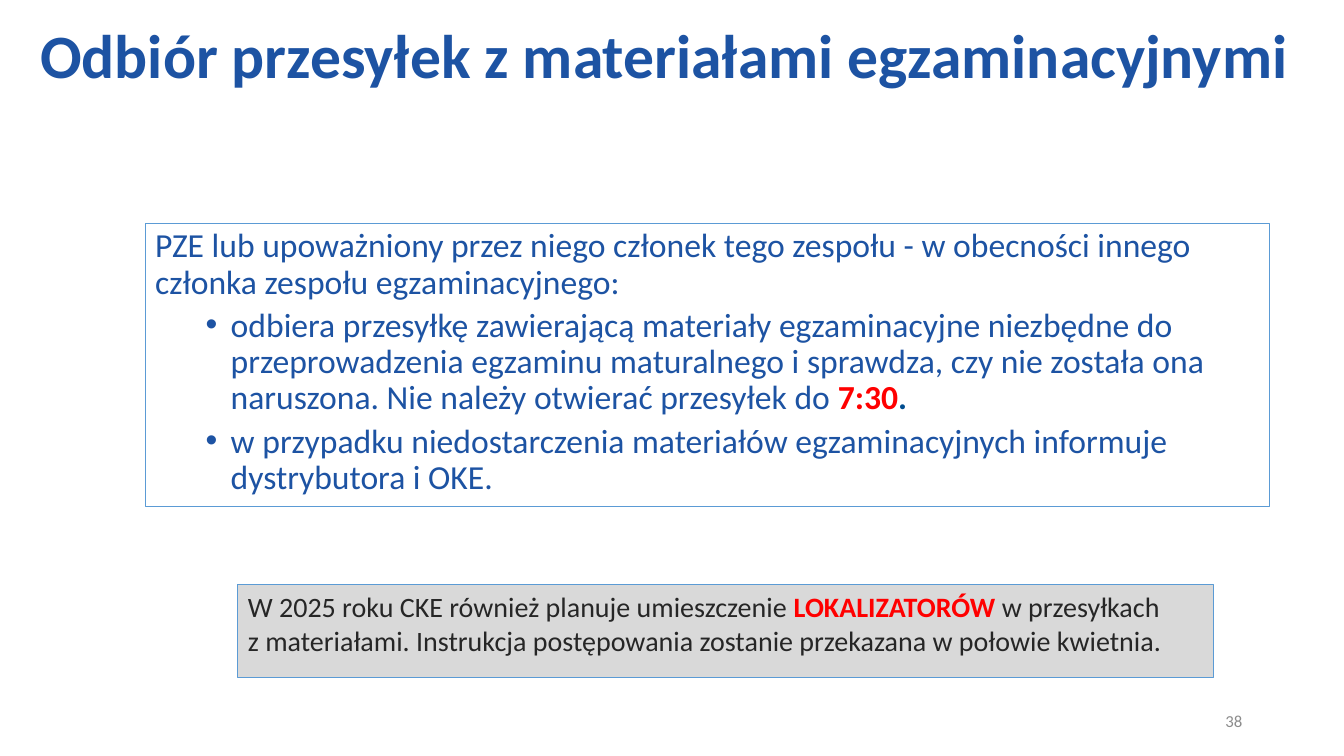
from lxml.etree import SubElement
from pptx import Presentation
from pptx.dml.color import RGBColor
from pptx.enum.shapes import MSO_SHAPE
from pptx.enum.text import MSO_ANCHOR as ANCHOR, PP_ALIGN as ALIGN
from pptx.oxml.ns import qn
from pptx.util import Inches, Pt

W, H = 13.33, 7.5
FONT = "Calibri"
BLUE, NAVY, RED = "1D53A3", "004D8F", "FF0000"
DARK, GREY, PALE, BORDER = "262626", "8C8C8C", "D9D9D9", "5B9BD5"

# A paragraph is a list of runs: (text, format changes)
HOT = {"color": RED, "bold": True}
TITLE = [[("Odbiór przesyłek z materiałami egzaminacyjnymi ", {"bold": True})]]
DUTIES = [
    [("PZE lub upoważniony przez niego członek tego zespołu - w obecności innego "
      "członka zespołu egzaminacyjnego:", {})],
    [("odbiera przesyłkę zawierającą materiały egzaminacyjne niezbędne do "
      "przeprowadzenia egzaminu maturalnego i sprawdza, czy nie została ona "
      "naruszona. Nie należy otwierać przesyłek do ", {}),
     ("7:30", HOT), (".", {"color": NAVY, "bold": True})],
    [("w przypadku niedostarczenia materiałów egzaminacyjnych informuje "
      "dystrybutora i OKE.", {})],
]
NOTICE = [[
    ("W 2025 roku CKE również planuje umieszczenie ", {}),
    ("LOKALIZATORÓW ", HOT),
    ("w przesyłkach\nz materiałami. Instrukcja postępowania zostanie przekazana "
     "w połowie kwietnia.", {}),
]]
NUMBER = [[("38", {})]]

# Each box: left, top, width, height in inches, then its look
BOXES = [
    dict(at=(0, 0, W, 1.16), text=TITLE, size=44, color=BLUE,
         align=ALIGN.CENTER, anchor=ANCHOR.MIDDLE, spacing=0.9),
    dict(at=(1.44, 2.22, 11.15, 2.81), text=DUTIES, size=24, color=BLUE,
         line=BORDER, spacing=0.9, bullets_from=1),
    dict(at=(9.42, 6.95, 3, 0.4), text=NUMBER, size=12, color=GREY,
         align=ALIGN.RIGHT, anchor=ANCHOR.MIDDLE),
    dict(at=(2.36, 5.8, 9.68, 0.92), text=NOTICE, size=20, color=DARK,
         line=BORDER, fill=PALE),
]


def rgb(code):
    return RGBColor.from_string(code)


def add_bullet(p):
    pPr = p._p.get_or_add_pPr()
    pPr.set("marL", str(Inches(0.75)))
    pPr.set("indent", str(Inches(-0.25)))
    SubElement(pPr, qn("a:buFont")).set("typeface", "Arial")
    SubElement(pPr, qn("a:buChar")).set("char", "•")


def add_runs(p, runs, size, color):
    for text, changes in runs:
        for i, part in enumerate(text.split("\n")):
            if i:
                p.add_line_break()
            r = p.add_run()
            r.text = part
            look = {"name": FONT, "size": Pt(size), "bold": False,
                    "color": color, **changes}
            r.font.color.rgb = rgb(look.pop("color"))
            for name, value in look.items():
                setattr(r.font, name, value)


def add_box(slide, at, text, size, color, align=ALIGN.LEFT, anchor=ANCHOR.TOP,
            spacing=1.0, line=None, fill=None, bullets_from=None):
    place = [Inches(v) for v in at]
    if line:
        s = slide.shapes.add_shape(MSO_SHAPE.RECTANGLE, *place)
        s.shadow.inherit = False
        s.line.color.rgb = rgb(line)
        s.line.width = Pt(0.75)
        if fill:
            s.fill.solid()
            s.fill.fore_color.rgb = rgb(fill)
        else:
            s.fill.background()
    else:
        s = slide.shapes.add_textbox(*place)
    tf = s.text_frame
    tf.word_wrap = True
    tf.vertical_anchor = anchor
    for i, runs in enumerate(text):
        p = tf.paragraphs[0] if i == 0 else tf.add_paragraph()
        p.alignment = align
        p.line_spacing = spacing
        if i:
            p.space_before = Pt(5)
        if bullets_from is not None and i >= bullets_from:
            p.level = 1
            add_bullet(p)
        add_runs(p, runs, size, color)


def main():
    prs = Presentation()
    prs.slide_width, prs.slide_height = Inches(W), Inches(H)
    slide = prs.slides.add_slide(prs.slide_layouts[6])
    for box in BOXES:
        add_box(slide, **box)
    prs.save("out.pptx")


if __name__ == "__main__":
    main()
